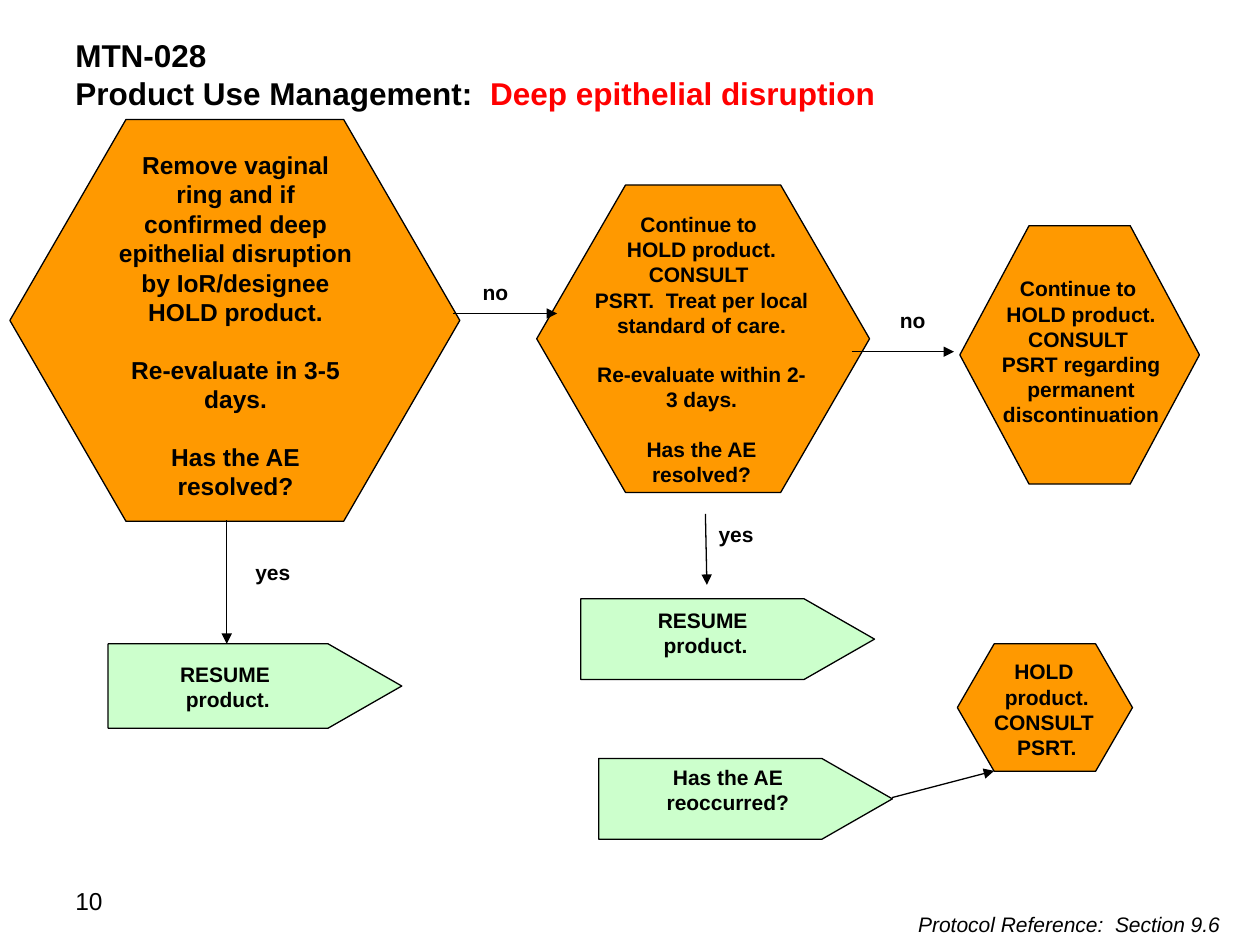
"""Draw the product use flow chart for deep epithelial disruption."""
from dataclasses import dataclass

from lxml.etree import SubElement as Sub
from pptx import Presentation
from pptx.dml.color import RGBColor as Rgb
from pptx.enum.shapes import MSO_CONNECTOR as Link, MSO_SHAPE as Kind
from pptx.enum.text import MSO_ANCHOR as Anchor, PP_ALIGN as Align
from pptx.oxml.ns import qn
from pptx.util import Cm, Pt


@dataclass(frozen=True)
class Theme:
    font: str = "Arial"
    ink: Rgb = Rgb(0, 0, 0)
    alert: Rgb = Rgb(255, 0, 0)
    hold: Rgb = Rgb(255, 153, 0)
    go: Rgb = Rgb(204, 255, 204)
    line: float = 0.75
    small: int = 12
    mid: int = 14
    big: int = 18
    lead: float = 1.15
    hex_cut: float = 0.289
    tag_cut: float = 0.873


@dataclass(frozen=True)
class Box:
    left: float
    top: float
    width: float
    height: float

    def place(self) -> tuple:
        return Cm(self.left), Cm(self.top), Cm(self.width), Cm(self.height)


@dataclass(frozen=True)
class Step:
    shape: Box
    words: Box
    text: str
    size: int = 12
    go: bool = False


@dataclass(frozen=True)
class Arrow:
    start: tuple
    end: tuple


@dataclass(frozen=True)
class Label:
    left: float
    top: float
    text: str


LOOK = Theme()
TAG_W, TAG_H = 5.92, 1.63
WORD_W = 4.37
NOTE_W, NOTE_H = 2.46, 0.76

STEPS = [
    Step(Box(0.2, 2.41, 9.07, 8.1), Box(2.11, 2.9, 5.28, 7.44),
         "Remove vaginal ring and if confirmed deep epithelial disruption "
         "by IoR/designee HOLD product.\n\nRe-evaluate in 3-5 days."
         "\n\nHas the AE resolved?", LOOK.mid),
    Step(Box(10.82, 3.73, 6.71, 6.2), Box(11.73, 4.14, 4.83, 5.89),
         "Continue to \nHOLD product.\nCONSULT \n"
         "PSRT.  Treat per local standard of care."
         "\n\nRe-evaluate within 2-3 days.\n\nHas the AE resolved?"),
    Step(Box(19.35, 4.55, 4.83, 5.21), Box(19.61, 5.44, WORD_W, 3.84),
         "Continue to \nHOLD product.\nCONSULT \n"
         "PSRT regarding permanent discontinuation"),
    Step(Box(19.3, 12.98, 3.53, 2.57), Box(18.92, 13.16, WORD_W, 2.31),
         "HOLD \nproduct.\nCONSULT \nPSRT."),
    Step(Box(2.18, 12.98, TAG_W, 1.7), Box(2.41, 13.21, WORD_W, 1.3),
         "RESUME \nproduct.", go=True),
    Step(Box(11.71, 12.07, TAG_W, TAG_H), Box(12.04, 12.12, WORD_W, 1.3),
         "RESUME \nproduct.", go=True),
    Step(Box(12.07, 15.29, TAG_W, TAG_H), Box(12.07, 15.29, 5.21, 1.3),
         "Has the AE reoccurred?", go=True),
]

ARROWS = [
    Arrow((9.14, 6.32), (11.23, 6.32)),
    Arrow((17.17, 7.09), (19.23, 7.09)),
    Arrow((4.57, 10.49), (4.57, 12.98)),
    Arrow((14.22, 10.36), (14.25, 11.79)),
    Arrow((17.98, 16.08), (20.04, 15.54)),
]

LABELS = [
    Label(8.76, 5.51, "no"),
    Label(17.17, 6.07, "no"),
    Label(4.27, 11.15, "yes"),
    Label(13.61, 10.39, "yes"),
]


def say(slide, box: Box, text: str, *, size: int = LOOK.small,
        bold: bool = False, slant: bool = False, align=Align.LEFT,
        alert: str = "") -> None:
    """Write text, with a blank line as a gap and an alert run at the end."""
    frame = slide.shapes.add_textbox(*box.place()).text_frame
    frame.word_wrap = True
    frame.vertical_anchor = Anchor.TOP
    rows = [(row, i > 0 and n == 0)
            for i, block in enumerate(text.split("\n\n"))
            for n, row in enumerate(block.split("\n"))]
    for i, (row, gap) in enumerate(rows):
        para = frame.add_paragraph() if i else frame.paragraphs[0]
        para.alignment = align
        if gap:
            para.space_before = Pt(size * LOOK.lead)
        runs = [(row, LOOK.ink)]
        if alert and i == len(rows) - 1:
            runs.append((alert, LOOK.alert))
        for words, tint in runs:
            run = para.add_run()
            run.text = words
            font = run.font
            font.name, font.size = LOOK.font, Pt(size)
            font.bold, font.italic = bold, slant
            font.color.rgb = tint


def draw_step(slide, step: Step) -> None:
    """Draw one step and its words."""
    kind = Kind.PENTAGON if step.go else Kind.HEXAGON
    shape = slide.shapes.add_shape(kind, *step.shape.place())
    shape.adjustments[0] = LOOK.tag_cut if step.go else LOOK.hex_cut
    shape.shadow.inherit = False
    shape.fill.solid()
    shape.fill.fore_color.rgb = LOOK.go if step.go else LOOK.hold
    shape.line.color.rgb = LOOK.ink
    shape.line.width = Pt(LOOK.line)
    say(slide, step.words, step.text, size=step.size, bold=True,
        align=Align.CENTER)


def draw_arrow(slide, arrow: Arrow) -> None:
    """Draw a line with a filled head at its end."""
    ends = [Cm(n) for n in arrow.start + arrow.end]
    link = slide.shapes.add_connector(Link.STRAIGHT, *ends)
    link.line.color.rgb = LOOK.ink
    link.line.width = Pt(LOOK.line)
    props = link._element.spPr
    Sub(props.find(qn("a:ln")), qn("a:tailEnd"), type="triangle")
    Sub(props, qn("a:effectLst"))


def main() -> None:
    """Build and save the slide."""
    deck = Presentation()
    deck.slide_width, deck.slide_height = Cm(25.4), Cm(19.05)
    slide = deck.slides.add_slide(deck.slide_layouts[6])
    say(slide, Box(1.27, 0.61, 22.86, 1.8),
        "MTN-028\nProduct Use Management:  ", size=LOOK.big, bold=True,
        alert="Deep epithelial disruption")
    for step in STEPS:
        draw_step(slide, step)
    for arrow in ARROWS:
        draw_arrow(slide, arrow)
    for label in LABELS:
        say(slide, Box(label.left, label.top, NOTE_W, NOTE_H), label.text,
            bold=True, align=Align.CENTER)
    say(slide, Box(1.27, 17.73, 5.92, 1.32), "10", size=LOOK.mid)
    say(slide, Box(15.44, 18.26, 9.53, 0.76),
        "Protocol Reference:  Section 9.6 ", slant=True, align=Align.RIGHT)
    deck.save("out.pptx")


if __name__ == "__main__":
    main()
